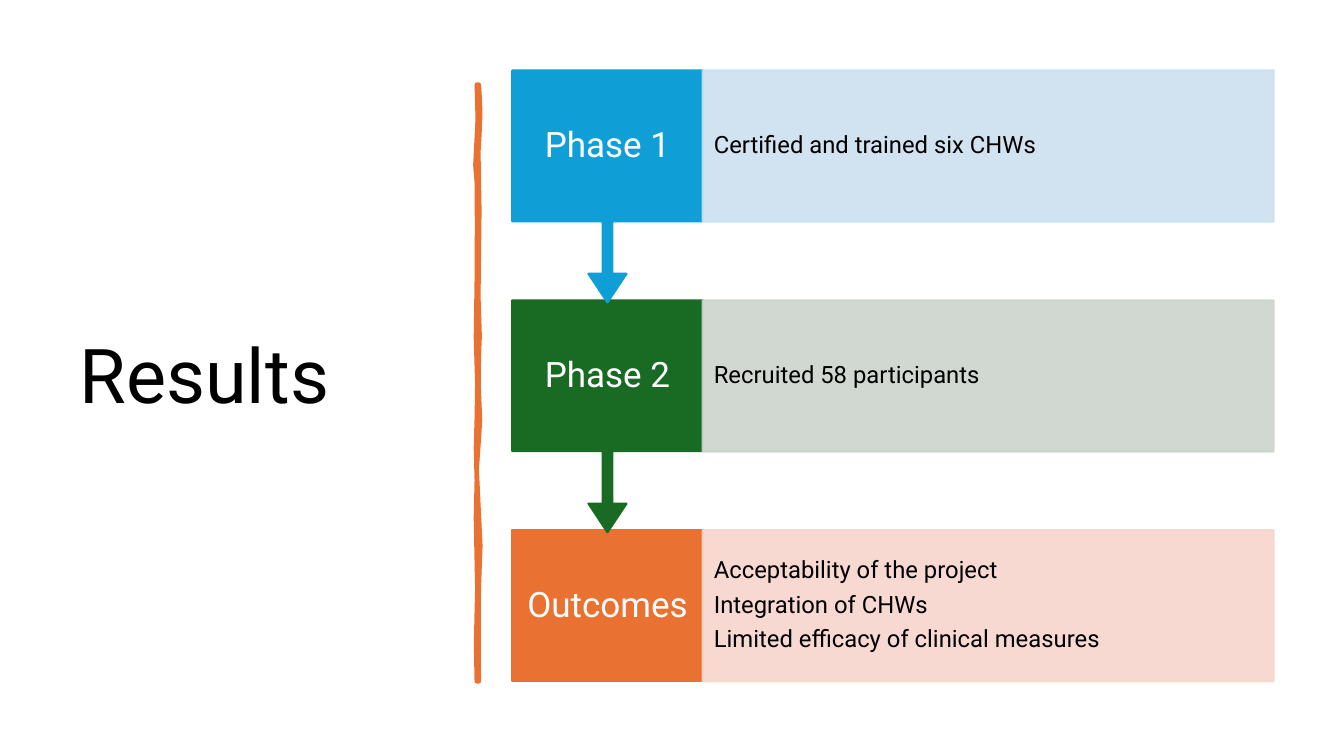
from pptx import Presentation
from pptx.dml.color import RGBColor
from pptx.enum.shapes import MSO_SHAPE
from pptx.enum.text import MSO_ANCHOR, MSO_AUTO_SIZE, PP_ALIGN
from pptx.oxml.ns import qn
from pptx.util import Pt
from lxml import etree

BLACK = RGBColor(0x00, 0x00, 0x00)
WHITE = RGBColor(0xFF, 0xFF, 0xFF)
BLUE = RGBColor(0x0F, 0x9E, 0xD5)
GREEN = RGBColor(0x19, 0x6B, 0x24)
ORANGE = RGBColor(0xE9, 0x71, 0x32)
PALE_BLUE = RGBColor(0xCC, 0xDF, 0xEF)
PALE_GREEN = RGBColor(0xCC, 0xD4, 0xCD)
PALE_ORANGE = RGBColor(0xF7, 0xD5, 0xCE)
FONT = "Roboto"

TOP, PITCH, BOX_H = 50.4, 164.16, 108
LABEL_X, LABEL_W, DETAIL_W = 365.8, 136.2, 407.8
CALLOUT_H = 165.6


def paint(sp, color, width):
    sp.shadow.inherit = False
    sp.fill.solid()
    sp.fill.fore_color.rgb = color
    sp.line.color.rgb = color
    sp.line.width = Pt(width)


def write(sp, text, size, color, align, inset_x, inset_y, gap):
    tf = sp.text_frame
    tf.word_wrap = True
    tf.auto_size = MSO_AUTO_SIZE.NONE
    tf.vertical_anchor = MSO_ANCHOR.MIDDLE
    tf.margin_left = tf.margin_right = Pt(inset_x)
    tf.margin_top = tf.margin_bottom = Pt(inset_y)
    tf.text = text
    for p in tf.paragraphs:
        p.alignment = align
        p.line_spacing = 0.9
        p.space_before = Pt(0)
        p.space_after = Pt(gap)
        for r in p.runs:
            r.font.name = FONT
            r.font.size = Pt(size)
            r.font.color.rgb = color


prs = Presentation()
prs.slide_width, prs.slide_height = Pt(960), Pt(540)
s = prs.slides.add_slide(prs.slide_layouts[5])

title = s.shapes.title
title.left, title.top, title.width, title.height = Pt(49.7), Pt(50.4), Pt(269.3), Pt(440)
write(title, "Results", 54, BLACK, PP_ALIGN.LEFT, 7.2, 3.6, 0)

stroke = [
    (342, 60.5), (342.8, 72), (343, 82), (342.5, 95), (341.7, 109), (342, 128),
    (342.4, 150), (342, 185), (341.7, 212), (342.6, 240), (342, 256),
    (341.8, 275), (342.9, 300), (342, 314), (340.5, 335), (342, 367),
    (343.1, 390), (342, 420), (341.8, 445), (342, 486.7),
    (340.6, 486.7), (340.1, 460), (341, 420), (340.6, 401), (340, 370),
    (340.6, 343), (340, 320), (340.6, 299), (341, 275), (340, 241),
    (340.6, 200), (340.8, 160), (340.6, 130), (339.6, 118), (341.3, 85),
    (340.6, 60.5),
]
points = [(Pt(x), Pt(y)) for x, y in stroke]
builder = s.shapes.build_freeform(*points[0], scale=1.0)
builder.add_line_segments(points[1:], close=True)
brush = builder.convert_to_shape()
paint(brush, ORANGE, 3.25)
ln = brush.line.fill._xPr
ln.set("cap", "rnd")
etree.SubElement(ln, qn("a:round"))

phases = [
    ("Phase 1", "Certified and trained six CHWs", BLUE, PALE_BLUE),
    ("Phase 2", "Recruited 58 participants", GREEN, PALE_GREEN),
    ("Outcomes", "Acceptability of the project\nIntegration of CHWs\n"
     "Limited efficacy of clinical measures", ORANGE, PALE_ORANGE),
]
last = len(phases) - 1
for i, (name, details, color, pale) in reversed(list(enumerate(phases))):
    y = TOP + i * PITCH
    kind, h = (MSO_SHAPE.RECTANGLE, BOX_H) if i == last else (MSO_SHAPE.DOWN_ARROW_CALLOUT, CALLOUT_H)
    label = s.shapes.add_shape(kind, Pt(LABEL_X), Pt(y), Pt(LABEL_W), Pt(h))
    if i < last:
        for k, value in enumerate((0.05, 0.1, 0.15, 0.65)):
            label.adjustments[k] = value
    paint(label, color, 1.5)
    write(label, name, 25, WHITE, PP_ALIGN.CENTER, 9.4, 13.7, 8.75)

    detail = s.shapes.add_shape(
        MSO_SHAPE.RECTANGLE, Pt(LABEL_X + LABEL_W), Pt(y), Pt(DETAIL_W), Pt(BOX_H))
    paint(detail, pale, 1.5)
    for clr in detail._element.spPr.iter(qn("a:srgbClr")):
        etree.SubElement(clr, qn("a:alpha")).set("val", "90000")
    write(detail, details, 17, BLACK, PP_ALIGN.LEFT, 7.9, 17.3, 6.3)

prs.save("out.pptx")
